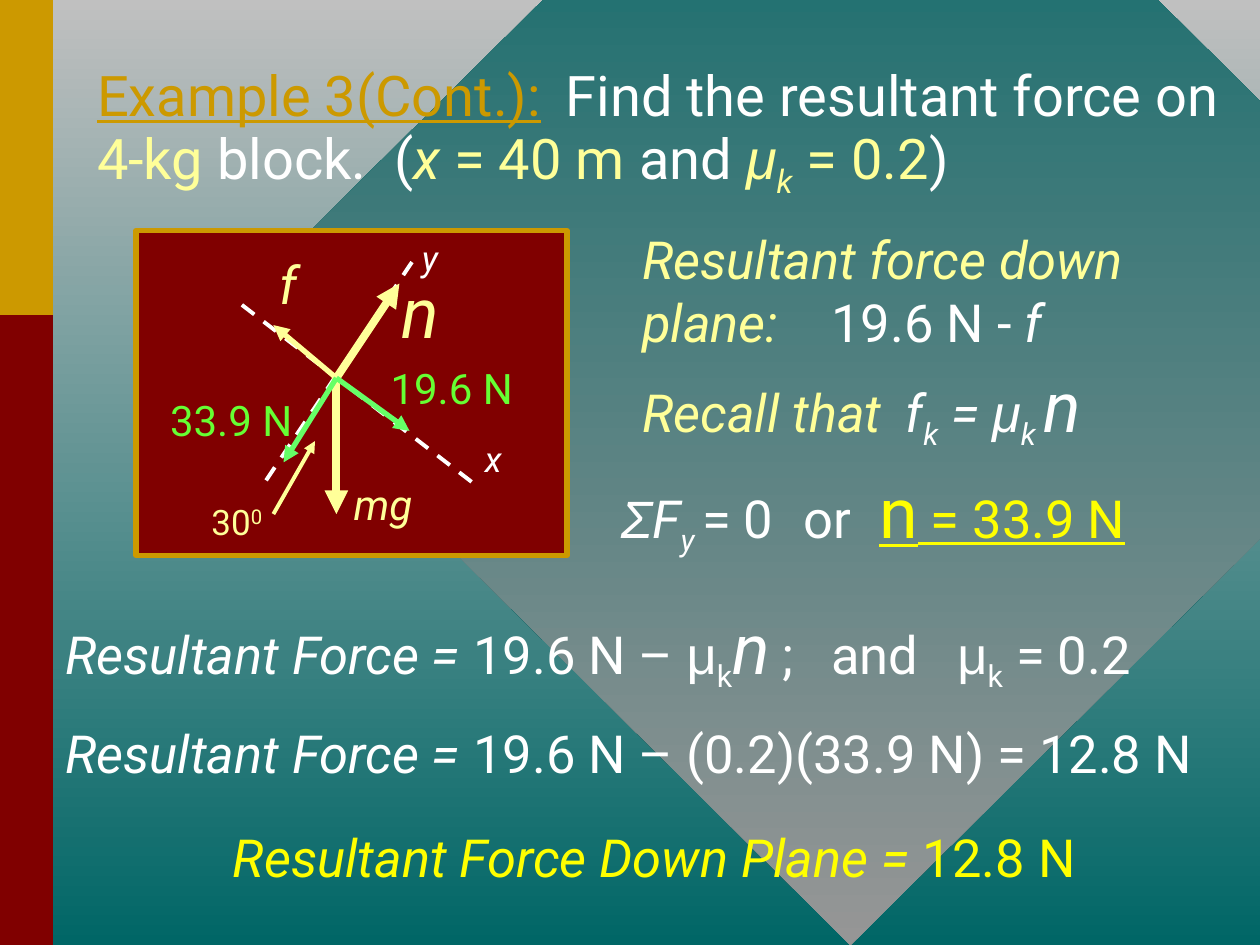
"""Build the resultant-force example slide with its free-body diagram."""
from lxml.etree import SubElement
from pptx import Presentation
from pptx.dml.color import RGBColor
from pptx.enum.dml import MSO_LINE
from pptx.enum.shapes import MSO_CONNECTOR, MSO_SHAPE
from pptx.enum.text import MSO_ANCHOR, MSO_AUTO_SIZE, PP_ALIGN
from pptx.oxml.ns import qn
from pptx.util import Inches, Pt

WHITE, CREAM, YELLOW = "FFFFFF", "FFFF99", "FFFF00"
GOLD, MAROON, TEAL = "CC9900", "800000", "006666"
LIME, GREEN = "66FF33", "66FF66"
ORIGIN = (2.67, 3)


def color(value):
    """Turn a hex string into a colour."""
    return RGBColor.from_string(value)


def fill_gradient(fill, top, bottom):
    """Fill from a top colour down to a bottom colour."""
    fill.gradient()
    fill.gradient_angle = 270
    for stop, value, position in zip(fill.gradient_stops, (top, bottom), (0, 1)):
        stop.color.rgb = color(value)
        stop.position = position


def add_block(shapes, kind, box, fill=None, outline=None):
    """Add a flat shape, optionally filled and outlined."""
    shape = shapes.add_shape(kind, *map(Inches, box))
    shape.shadow.inherit = False
    if fill:
        shape.fill.solid()
        shape.fill.fore_color.rgb = color(fill)
    if outline:
        shape.line.color.rgb = color(outline)
        shape.line.width = Pt(3)
    else:
        shape.line.fill.background()
    return shape


def add_line(shapes, start, end, line_color, width, arrow=True):
    """Add a force arrow, or a dashed axis when arrow is False."""
    line = shapes.add_connector(MSO_CONNECTOR.STRAIGHT, *map(Inches, start + end))
    line.line.color.rgb = color(line_color)
    line.line.width = Pt(width)
    properties = line._element.spPr
    if arrow:
        SubElement(properties.find(qn("a:ln")), qn("a:tailEnd"), type="triangle")
    else:
        line.line.dash_style = MSO_LINE.DASH
    SubElement(properties, qn("a:effectLst"))


def add_run(paragraph, text, text_color, style="", size=30):
    """Add a run; style letters: i italic, u underline, a Arial, _ sub, ^ super."""
    run = paragraph.add_run()
    run.text = text
    font = run.font
    font.name = "Arial" if "a" in style else "Roboto"
    font.size = Pt(size)
    font.color.rgb = color(text_color)
    font.italic = "i" in style
    font.underline = "u" in style
    if "_" in style:
        font._element.set("baseline", "-25000")
    if "^" in style:
        font._element.set("baseline", "30000")


def add_tabs(paragraph, positions):
    """Set left tab stops, in inches from the text edge."""
    tabs = SubElement(paragraph._p.get_or_add_pPr(), qn("a:tabLst"))
    for position in positions:
        SubElement(tabs, qn("a:tab"), pos=str(Inches(position)), algn="l")


def add_text(shapes, box, runs, tabs=(), centered=False, anchor=MSO_ANCHOR.TOP):
    """Add a wrapping text box holding one paragraph of styled runs."""
    frame = shapes.add_textbox(*map(Inches, box)).text_frame
    frame.word_wrap = True
    frame.auto_size = MSO_AUTO_SIZE.SHAPE_TO_FIT_TEXT
    frame.vertical_anchor = anchor
    paragraph = frame.paragraphs[0]
    if centered:
        paragraph.alignment = PP_ALIGN.CENTER
    if tabs:
        add_tabs(paragraph, tabs)
    for run in runs:
        add_run(paragraph, *run)


def add_backdrop(slide):
    """Draw the gradient background, diamond and side bar."""
    fill_gradient(slide.background.fill, "C0C0C0", TEAL)
    diamond = add_block(slide.shapes, MSO_SHAPE.DIAMOND, (1.75, -2.42, 10, 9.92))
    fill_gradient(diamond.fill, TEAL, "969696")
    for height, fill in ((7.5, MAROON), (2.5, GOLD)):
        add_block(slide.shapes, MSO_SHAPE.RECTANGLE, (0, 0, 0.42, height), fill)


def fill_title(slide):
    """Place the title in front of the backdrop and write it."""
    title = slide.shapes.title
    slide.shapes._spTree.append(title._element)
    title.left, title.top, title.width, title.height = map(Inches, (0.67, 0.42, 9.33, 1.25))
    frame = title.text_frame
    frame.word_wrap = True
    frame.auto_size = MSO_AUTO_SIZE.NONE
    frame.vertical_anchor = MSO_ANCHOR.MIDDLE
    paragraph = frame.paragraphs[0]
    paragraph.alignment = PP_ALIGN.LEFT
    paragraph.line_spacing = 0.85
    add_tabs(paragraph, (2.36, 3.72))
    for text, text_color, style in (
        ("Example 3(Cont.):", GOLD, "u"),
        ("\tFind the resultant force on ", WHITE, ""),
        ("4-kg", CREAM, ""),
        (" block.\t(", WHITE, ""),
        ("x ", CREAM, "i"),
        ("= 40 m", CREAM, ""),
        (" and ", WHITE, ""),
        ("μ", CREAM, "ia"),
        ("k", CREAM, "i_"),
        (" = 0.2", CREAM, ""),
        (")", WHITE, ""),
    ):
        add_run(paragraph, text, text_color, style, 32)


def add_diagram(slide):
    """Draw the free-body diagram as one group."""
    shapes = slide.shapes.add_group_shape().shapes
    add_block(shapes, MSO_SHAPE.RECTANGLE, (1.08, 1.83, 3.42, 2.58), MAROON, GOLD)
    for start, end in (((1.92, 2.42), (3.75, 3.83)), ((3.27, 2.08), (2.1, 3.83))):
        add_line(shapes, start, end, WHITE, 2.25, arrow=False)
    for end, line_color, width in (
        ((2.17, 2.58), CREAM, 3),
        ((2.67, 4.08), CREAM, 4.5),
        ((3.17, 2.25), CREAM, 4.5),
        ((2.25, 3.67), GREEN, 3),
        ((3.25, 3.42), GREEN, 3),
    ):
        add_line(shapes, ORIGIN, end, line_color, width)
    add_line(shapes, (2.17, 4.08), (2.5, 3.5), CREAM, 2.25)
    for box, runs in (
        ((3, 2.08, 0.67, 0.77), [("n", CREAM, "i", 40)]),
        ((2, 1.95, 0.58, 0.6), [("f", CREAM, "i", 30)]),
        ((2.58, 3.75, 0.92, 0.5), [("mg", CREAM, "i", 24)]),
        ((1.42, 3.92, 0.92, 0.43), [("30", CREAM, "", 20), ("0", CREAM, "^", 20)]),
        ((1.17, 3.08, 1.33, 0.5), [("33.9 N", LIME, "", 24)]),
        ((2.5, 2.83, 2.17, 0.5), [("19.6 N", LIME, "", 24)]),
    ):
        add_text(shapes, box, runs, centered=True, anchor=MSO_ANCHOR.MIDDLE)
    for name, left, top in (("x", 3.75, 3.42), ("y", 3.25, 1.83)):
        add_text(shapes, (left, top, 0.67, 0.43), [(name, WHITE, "i", 20)])


def add_solution(slide):
    """Write the steps of the solution."""
    coefficient = [("μ", WHITE, "a"), ("k", WHITE, "_")]
    result = ("Resultant Force = ", WHITE, "i")
    for box, tabs, runs in (
        ((5, 1.75, 4.67, 1.1), (1.5,), [
            ("Resultant force down plane:\t", CREAM, "i"),
            ("19.6 N - ", WHITE), ("f", WHITE, "i")]),
        ((5, 2.83, 4.08, 0.77), (2.09,), [
            ("Recall that\t", CREAM, "i"), ("f", WHITE, "i"), ("k", WHITE, "i_"),
            (" = ", WHITE, "i"), ("μ", WHITE, "ia"), ("k ", WHITE, "i_"),
            ("n", WHITE, "i", 40)]),
        ((4.83, 3.67, 4.83, 0.77), (1.45, 2.05), [
            ("Σ", WHITE, "ia"), ("F", WHITE, "i"), ("y ", WHITE, "i_"),
            ("= 0\tor\t", WHITE), ("n", YELLOW, "u", 40), (" = 33.9 N", YELLOW, "u")]),
        ((0.42, 4.75, 9.42, 0.77), (6.08, 7.08), [
            result, ("19.6 N – ", WHITE), *coefficient, ("n", WHITE, "i", 40),
            (" ;\tand\t", WHITE), *coefficient, (" = 0.2", WHITE)]),
        ((0.42, 5.67, 9.58, 0.6), (), [
            result, ("19.6 N – (0.2)(33.9 N) = 12.8 N", WHITE)]),
        ((1.75, 6.5, 7.25, 0.6), (), [
            ("Resultant Force Down Plane = ", YELLOW, "i"), ("12.8 N", YELLOW)]),
    ):
        add_text(slide.shapes, box, runs, tabs)


def main():
    """Build and save the presentation."""
    presentation = Presentation()
    presentation.slide_width, presentation.slide_height = Inches(10), Inches(7.5)
    slide = presentation.slides.add_slide(presentation.slide_layouts[5])
    add_backdrop(slide)
    fill_title(slide)
    add_diagram(slide)
    add_solution(slide)
    presentation.save("out.pptx")


if __name__ == "__main__":
    main()
